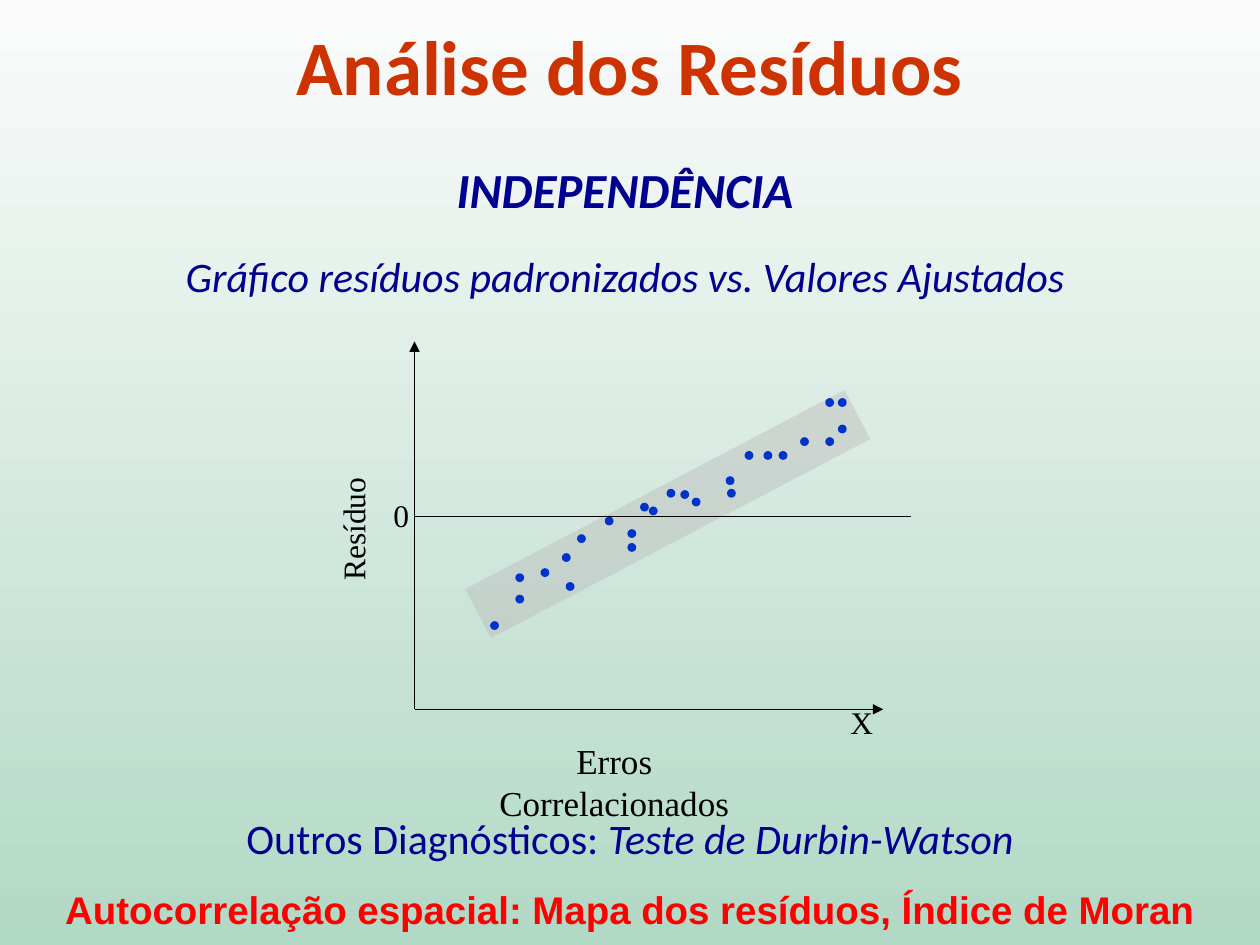
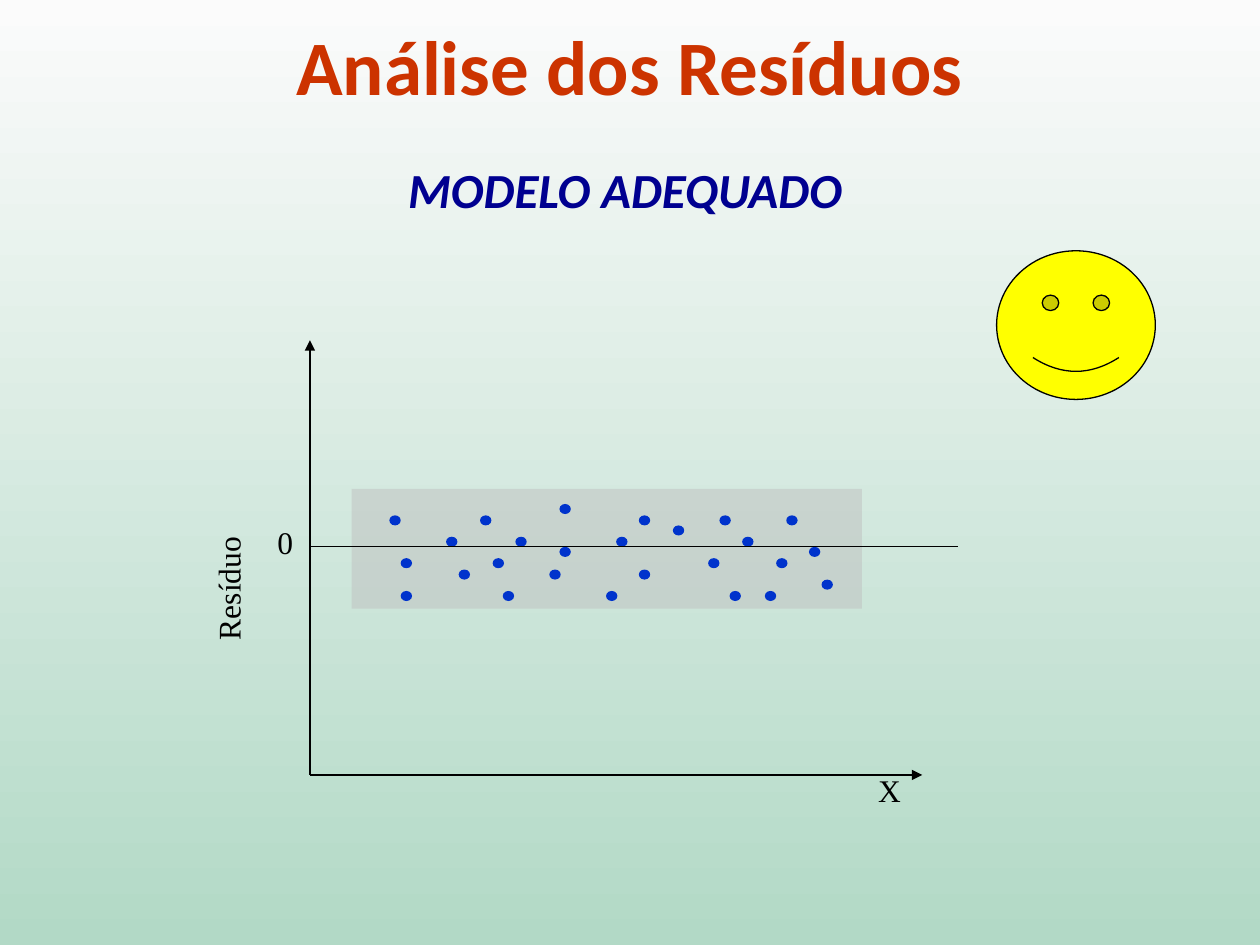
from lxml import etree
from pptx import Presentation
from pptx import util as u
from pptx.dml.color import RGBColor
from pptx.enum import shapes, text
from pptx.oxml import ns

Inches, Pt = u.Inches, u.Pt

COLORS = {
    "background_top": "FBFBFB",
    "background_bottom": "B2D9C6",
    "title": "CC3300",
    "heading": "000090",
    "warning": "FF0000",
    "ink": "000000",
    "dot": "0033CC",
    "band": "C0C0C0",
    "smiley": "FFFF00",
}
HEADING_FONT, PLOT_FONT = "Calibri", "Times New Roman"

# Left and top of every dot, in inches
CORRELATED_DOTS = [
    (4.29, 4.51), (4.98, 4.2), (4.09, 4.72), (4.98, 4.31), (6.55, 3.16),
    (4.8, 4.1), (5.08, 3.99), (5.15, 4.02), (5.29, 3.88), (6.06, 3.58),
    (4.58, 4.24), (6.18, 3.58), (4.09, 4.55), (5.4, 3.89), (6.55, 3.47),
    (6.65, 3.37), (6.65, 3.16), (5.76, 3.78), (5.91, 3.58), (5.77, 3.88),
    (5.49, 3.95), (4.46, 4.39), (6.35, 3.47), (4.49, 4.62), (3.89, 4.93),
]
RANDOM_DOTS = [
    (3.09, 4.09), (3.54, 4.26), (3.18, 4.43), (3.64, 4.52), (4.09, 4.26),
    (4.44, 4), (4.44, 4.34), (4.81, 4.69), (4.89, 4.26), (5.07, 4.09),
    (5.62, 4.43), (4.36, 4.52), (6.24, 4.09), (3.81, 4.09), (5.07, 4.52),
    (6.16, 4.43), (6.42, 4.34), (6.52, 4.6), (5.79, 4.69), (5.89, 4.26),
    (5.71, 4.09), (5.34, 4.17), (3.99, 4.69), (6.07, 4.69), (3.91, 4.43),
    (3.18, 4.69),
]


def color(name):
    return RGBColor.from_string(COLORS[name])


def add_run(paragraph, words, size=18, font=PLOT_FONT, ink="ink", bold=False, italic=False):
    run = paragraph.add_run()
    run.text = words
    run.font.size = Pt(size)
    run.font.name = font
    run.font.bold = bold
    run.font.italic = italic
    run.font.color.rgb = color(ink)


class Deck:
    def __init__(self):
        self.presentation = Presentation()
        self.presentation.slide_width = Inches(10)
        self.presentation.slide_height = Inches(7.5)
        self.slide = None
        self.shapes = None
        # Shared background, pale at the top and green at the bottom
        fill = self.presentation.slide_master.background.fill
        fill.gradient()
        fill.gradient_angle = 270
        for stop, name in zip(fill.gradient_stops, ("background_top", "background_bottom")):
            stop.color.rgb = color(name)

    def new_slide(self, title):
        self.slide = self.presentation.slides.add_slide(self.presentation.slide_layouts[5])
        self.shapes = self.slide.shapes
        shape = self.shapes.title
        shape.left, shape.top = Inches(0), Inches(0.09)
        shape.width, shape.height = Inches(10), Inches(0.84)
        frame = shape.text_frame
        frame.auto_size = text.MSO_AUTO_SIZE.NONE
        frame.vertical_anchor = text.MSO_ANCHOR.MIDDLE
        frame.paragraphs[0].alignment = text.PP_ALIGN.CENTER
        add_run(frame.paragraphs[0], title, size=44, font=HEADING_FONT, ink="title", bold=True)

    def text_box(self, box, paragraphs, wrap=True, rotation=0, line_spacing=1.0):
        """Each paragraph is a list of (words, format) runs."""
        shape = self.shapes.add_textbox(*map(Inches, box))
        shape.rotation = rotation
        frame = shape.text_frame
        frame.word_wrap = wrap
        for index, runs in enumerate(paragraphs):
            paragraph = frame.add_paragraph() if index else frame.paragraphs[0]
            paragraph.alignment = text.PP_ALIGN.CENTER
            paragraph.line_spacing = line_spacing
            paragraph.space_before = Pt(13 if index else 0)
            for words, style in runs:
                add_run(paragraph, words, **style)

    def label(self, box, words, **options):
        size = options.pop("size", 18)
        self.text_box(box, [[(words, {"size": size})]], **options)

    def preset(self, kind, box, fill, line=None, alpha=None, rotation=0):
        shape = self.shapes.add_shape(kind, *map(Inches, box))
        shape.shadow.inherit = False
        shape.rotation = rotation
        shape.fill.solid()
        shape.fill.fore_color.rgb = color(fill)
        if line:
            shape.line.color.rgb = color(line)
            shape.line.width = Pt(0.75)
        else:
            shape.line.fill.background()
        if alpha:
            fill_color = shape._element.spPr.find(".//" + ns.qn("a:srgbClr"))
            etree.SubElement(fill_color, ns.qn("a:alpha"), val=str(alpha * 1000))

    def line(self, start, end, arrow=False):
        connector = self.shapes.add_connector(
            shapes.MSO_CONNECTOR.STRAIGHT, *map(Inches, start + end))
        connector.line.color.rgb = color("ink")
        connector.line.width = Pt(0.75)
        if arrow:
            etree.SubElement(connector.line._get_or_add_ln(), ns.qn("a:tailEnd"), type="triangle")
        etree.SubElement(connector._element.spPr, ns.qn("a:effectLst"))

    def residual_plot(self, origin, axis_top, axis_right, zero, band, dots, dot_size,
                      x_label, zero_label, residual_label, band_rotation=0, caption=None):
        self.shapes = self.slide.shapes.add_group_shape().shapes
        # Band and dots
        self.preset(shapes.MSO_SHAPE.RECTANGLE, band, "band", alpha=50, rotation=band_rotation)
        for dot in dots:
            self.preset(shapes.MSO_SHAPE.FLOWCHART_CONNECTOR, dot + dot_size, "dot")
        # Zero line and axes
        left, bottom = origin
        zero_right, zero_height = zero
        self.line((left, zero_height), (zero_right, zero_height))
        self.line(origin, (left, axis_top), arrow=True)
        self.line(origin, (axis_right, bottom), arrow=True)
        # Labels
        self.label(x_label + (0.38, 0.4), "X", wrap=False)
        self.label(zero_label + (0.33, 0.4), "0", wrap=False)
        self.label(residual_label + (1.02, 0.4), "Resíduo", wrap=False, rotation=270)
        if caption:
            self.label((3.78, 5.82, 2.19, 0.76), caption, size=20)
        self.shapes = self.slide.shapes


def main():
    deck = Deck()
    title = "Análise dos Resíduos"
    heading = {"size": 28, "font": HEADING_FONT, "ink": "heading", "bold": True, "italic": True}
    plain = {"size": 24, "font": HEADING_FONT, "ink": "heading"}
    slanted = {**plain, "italic": True}
    warning = {"size": 22, "font": "Arial", "ink": "warning", "bold": True}

    # Slide 1: correlated errors
    deck.new_slide(title)
    deck.text_box((0.3, 1.12, 9.32, 1.34), [
        [("INDEPENDÊNCIA", heading)],
        [("Gráfico resíduos padronizados vs. Valores Ajustados", slanted)],
    ], line_spacing=1.2)
    deck.text_box((0.39, 6.4, 9.22, 1.26), [
        [("Outros Diagnósticos: ", plain), ("Teste de Durbin-Watson", slanted)],
        [("Autocorrelação espacial: Mapa dos resíduos, Índice de Moran", warning)],
    ])
    deck.residual_plot(
        origin=(3.29, 5.63), axis_top=2.71, axis_right=7.01, zero=(7.23, 4.1),
        band=(3.6, 3.86, 3.4, 0.44), band_rotation=332.3,
        dots=CORRELATED_DOTS, dot_size=(0.07, 0.07),
        x_label=(6.65, 5.53), zero_label=(3.02, 3.89), residual_label=(2.29, 4),
        caption="Erros Correlacionados")

    # Slide 2: adequate model
    deck.new_slide(title)
    deck.text_box((0.3, 1.12, 9.32, 0.65), [[("MODELO ADEQUADO", heading)]], line_spacing=1.2)
    deck.residual_plot(
        origin=(2.46, 6.15), axis_top=2.7, axis_right=7.32, zero=(7.6, 4.34),
        band=(2.79, 3.88, 4.05, 0.95), dots=RANDOM_DOTS, dot_size=(0.09, 0.08),
        x_label=(6.87, 6.07), zero_label=(2.1, 4.1), residual_label=(1.3, 4.47))
    deck.preset(shapes.MSO_SHAPE.SMILEY_FACE, (7.91, 1.99, 1.26, 1.18), "smiley", line="ink")

    deck.presentation.save("out.pptx")


if __name__ == "__main__":
    main()
